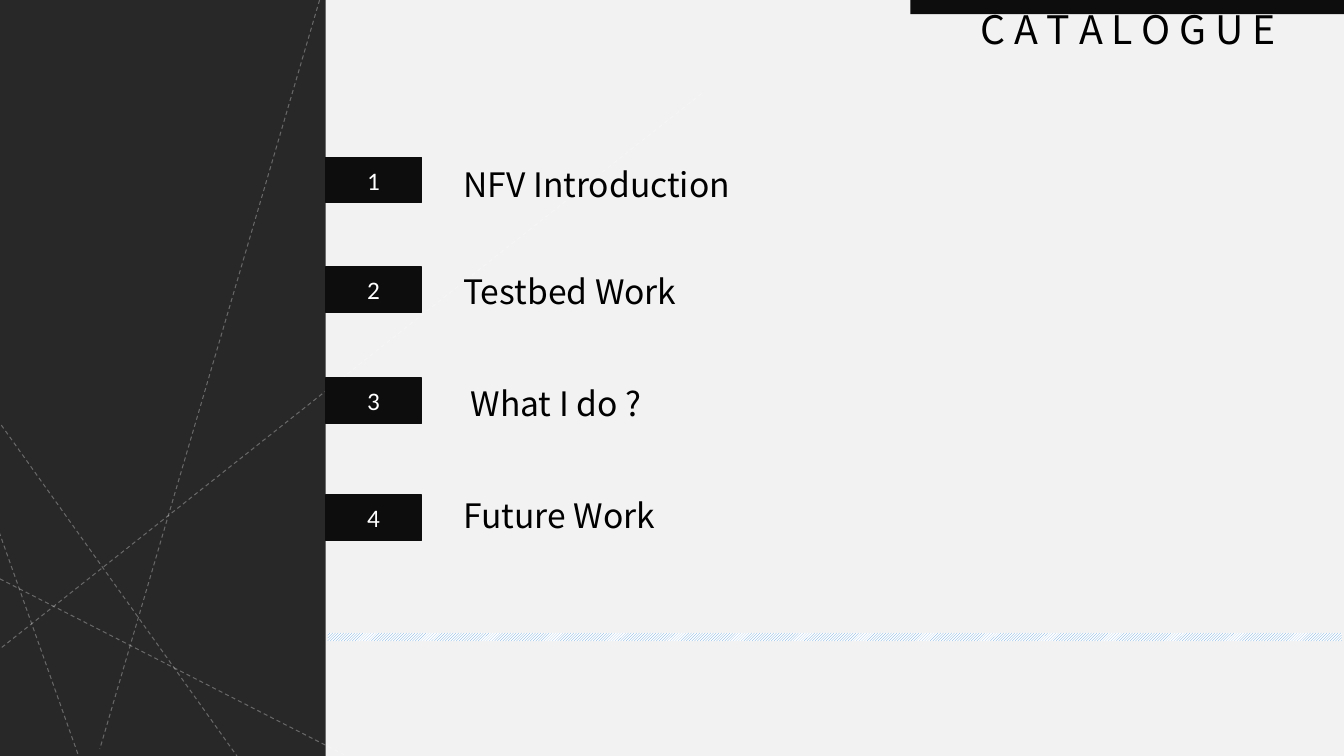
from pptx import Presentation
from pptx.dml.color import RGBColor
from pptx.enum.dml import MSO_LINE, MSO_PATTERN
from pptx.enum.shapes import MSO_CONNECTOR, MSO_SHAPE
from pptx.enum.text import MSO_ANCHOR, MSO_AUTO_SIZE, PP_ALIGN
from pptx.oxml.ns import qn
from pptx.util import Inches, Pt
from lxml.etree import SubElement

COLOURS = {
    "page": "F2F2F2", "panel": "282828", "black": "0D0D0D",
    "text": "000000", "white": "FFFFFF", "stripe": "5B9BD5",
}
PAGE_WIDTH, PAGE_HEIGHT = Inches(13.33), Inches(7.5)
BODY_FONT, TITLE_FONT, NUMBER_FONT = "Noto Sans CJK SC", "Noto Sans CJK JP", "Calibri"

# All places and sizes are percentages of the page width and height.
PANEL_WIDTH = 24.23
BADGE_SIZE = (7.13, 6)
LABEL_SIZE = (61.5, 6.67)
LABEL_INDENT = 2.24
HEADER_LEFT = 67.73

# label, badge top, label left, label top
TOPICS = [
    ("NFV Introduction", 20.8, 31.5, 21.07),
    ("Testbed Work", 35.33, 31.5, 35.2),
    ("What I do ?", 50, 32.03, 50),
    ("Future Work", 65.47, 31.5, 64.8),
]
# start x, start y, end x, end y
PANEL_LINES = [
    (-2.4, 74.4, 25.8, 100),
    (-2.4, 89.2, 52.28, 12.27),
    (-2.4, 58.67, 5.85, 100),
    (23.78, 0, 7.43, 99.07),
    (-2.4, 50, 17.63, 100),
]


def colour(name):
    return RGBColor.from_string(COLOURS[name])


def across(percent):
    return round(PAGE_WIDTH * percent / 100)


def down(percent):
    return round(PAGE_HEIGHT * percent / 100)


def frame(left, top, width, height):
    return across(left), down(top), across(width), down(height)


def write(box, text, *, font, size, fill="text", align=PP_ALIGN.LEFT,
          anchor=MSO_ANCHOR.TOP, grow=False, indent=0):
    text_frame = box.text_frame
    text_frame.word_wrap = True
    text_frame.vertical_anchor = anchor
    text_frame.auto_size = MSO_AUTO_SIZE.SHAPE_TO_FIT_TEXT if grow else MSO_AUTO_SIZE.NONE
    para = text_frame.paragraphs[0]
    para.alignment = align
    if indent:
        properties = para._p.get_or_add_pPr()
        properties.set("marL", str(across(indent)))
        properties.set("indent", "0")
    span = para.add_run()
    span.text = text
    span.font.name = font
    span.font.size = Pt(size)
    span.font.color.rgb = colour(fill)


def add_block(page, place, fill, line=None):
    block = page.shapes.add_shape(MSO_SHAPE.RECTANGLE, *frame(*place))
    block.shadow.inherit = False
    block.fill.solid()
    block.fill.fore_color.rgb = colour(fill)
    if line:
        block.line.color.rgb = colour(line)
        block.line.width = Pt(1)
    else:
        block.line.fill.background()
    return block


def add_stripe(page, place):
    stripe = add_block(page, place, "white")
    stripe.fill.patterned()
    stripe.fill.pattern = MSO_PATTERN.LIGHT_UPWARD_DIAGONAL
    stripe.fill.fore_color.rgb = colour("stripe")
    stripe.fill.back_color.rgb = colour("white")


def add_dashed_line(group, start_x, start_y, end_x, end_y):
    line = group.shapes.add_connector(
        MSO_CONNECTOR.STRAIGHT, across(start_x), down(start_y), across(end_x), down(end_y))
    line.line.color.rgb = colour("white")
    line.line.width = Pt(0.75)
    line.line.dash_style = MSO_LINE.DASH
    properties = line._element.spPr
    tint = properties.find(".//" + qn("a:srgbClr"))
    SubElement(tint, qn("a:alpha")).set("val", "29000")
    SubElement(properties, qn("a:effectLst"))


def add_topic(page, number, label, badge_top, label_left, label_top):
    badge = add_block(page, (PANEL_WIDTH, badge_top, *BADGE_SIZE), "black", line="black")
    write(badge, str(number), font=NUMBER_FONT, size=18, fill="white",
          align=PP_ALIGN.CENTER, anchor=MSO_ANCHOR.MIDDLE)
    box = page.shapes.add_textbox(*frame(label_left, label_top, *LABEL_SIZE))
    write(box, label, font=BODY_FONT, size=24, grow=True, indent=LABEL_INDENT)


def set_title(page, text):
    title = page.shapes.title
    title.left, title.top, title.width, title.height = frame(HEADER_LEFT, 0, 32.4, 7.6)
    write(title, text, font=TITLE_FONT, size=28, align=PP_ALIGN.CENTER, grow=True)


def main():
    deck = Presentation()
    deck.slide_width, deck.slide_height = PAGE_WIDTH, PAGE_HEIGHT
    page = deck.slides.add_slide(deck.slide_layouts[5])
    page.background.fill.solid()
    page.background.fill.fore_color.rgb = colour("page")

    set_title(page, "C A T A L O G U E")
    add_block(page, (0, 0, PANEL_WIDTH, 100), "panel")
    line_group = page.shapes.add_group_shape()
    for ends in PANEL_LINES:
        add_dashed_line(line_group, *ends)
    for number, topic in enumerate(TOPICS, start=1):
        add_topic(page, number, *topic)
    add_stripe(page, (24.38, 83.73, 75.45, 1.07))
    add_block(page, (HEADER_LEFT, 0, 100 - HEADER_LEFT, 1.87), "black")
    deck.save("out.pptx")


if __name__ == "__main__":
    main()
